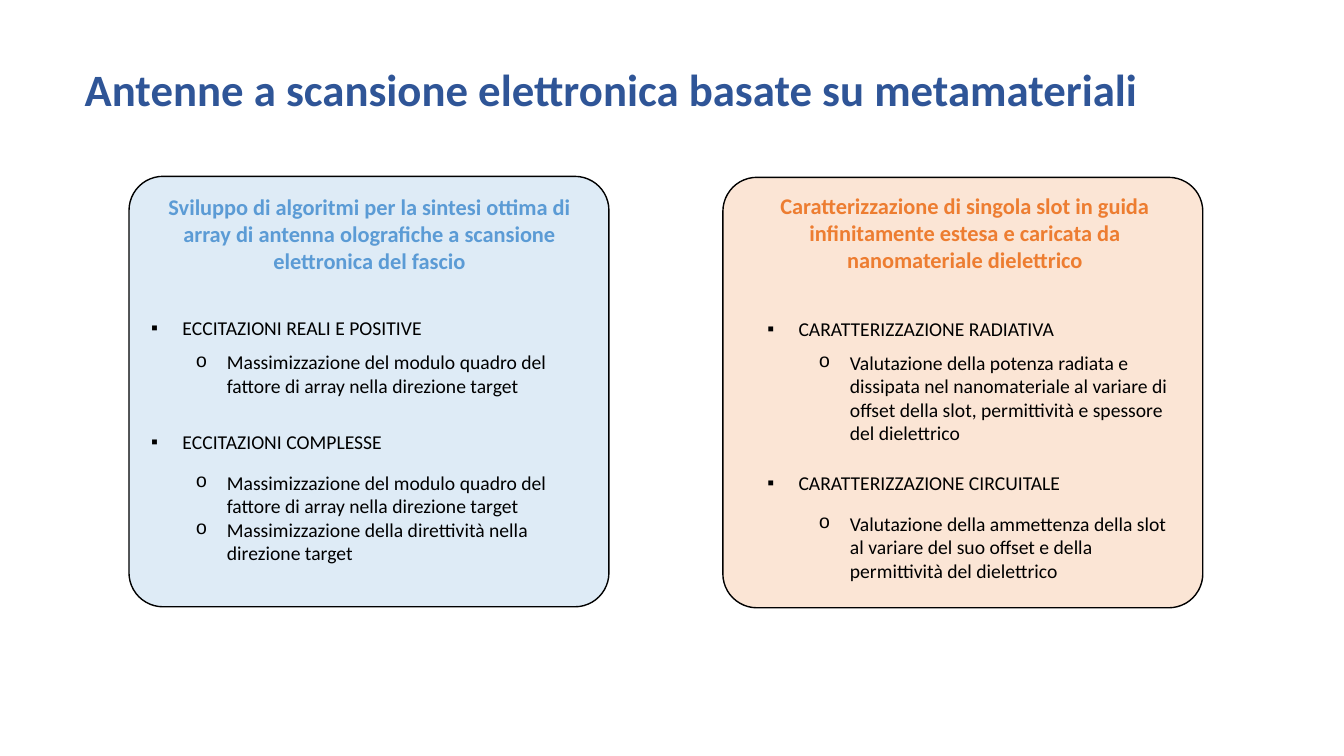
from lxml import etree
from pptx import Presentation
from pptx.dml.color import RGBColor
from pptx.enum import shapes, text
from pptx.oxml.ns import qn
from pptx.util import Inches, Pt


def color(hex_code):
    return RGBColor.from_string(hex_code)


def write(frame, words, size=14, ink="000000", bold=False, align="LEFT",
          before=0, line=1.0, bullet=None, indent=0):
    """Write one paragraph: the first of an empty frame, else a new one."""
    para = frame.paragraphs[0] if not frame.text else frame.add_paragraph()
    para.alignment = getattr(text.PP_ALIGN, align)
    para.line_spacing = line
    para.space_before = Pt(before)
    para.space_after = Pt(0)
    if bullet:
        symbol, face = bullet
        props = para._p.get_or_add_pPr()
        props.set("marL", str(Inches(indent)))
        props.set("indent", str(-Inches(0.31)))
        etree.SubElement(props, qn("a:buFont"), typeface=face)
        etree.SubElement(props, qn("a:buChar"), char=symbol)
    span = para.add_run()
    span.text = words
    span.font.name = "Calibri"
    span.font.size = Pt(size)
    span.font.bold = bold
    span.font.color.rgb = color(ink)


deck = Presentation()
deck.slide_width, deck.slide_height = Inches(13.33), Inches(7.5)
page = deck.slides.add_slide(deck.slide_layouts.get_by_name("Comparison"))
title, *bodies = page.placeholders

SQUARE, RING = ("▪", "Arial"), ("o", "Courier New")
# Each item: bullet, space before in points, words
cards = [
    dict(
        card=(1.28, 1.75), accent="5B9BD5",
        heading_at=(1.34, 1.87, 4.65, 0.91),
        heading="Sviluppo di algoritmi per la sintesi ottima di array di antenna "
                "olografiche a scansione elettronica del fascio",
        list_at=(1.4, 3.08, 4.55, 2.59), sub_indent=0.75,
        items=[
            (SQUARE, 0, "ECCITAZIONI REALI E POSITIVE"),
            (RING, 8, "Massimizzazione del modulo quadro del fattore di array "
                      "nella direzione target"),
            (SQUARE, 23, "ECCITAZIONI COMPLESSE"),
            (RING, 12.5, "Massimizzazione del modulo quadro del fattore di array "
                         "nella direzione target"),
            (RING, 0, "Massimizzazione della direttività nella direzione target"),
        ]),
    dict(
        card=(7.17, 1.76), accent="ED7D31",
        heading_at=(7.35, 1.86, 4.44, 0.91),
        heading="Caratterizzazione di singola slot in guida infinitamente estesa "
                "e caricata da nanomateriale dielettrico",
        list_at=(7.51, 3.09, 4.18, 2.76), sub_indent=0.82,
        items=[
            (SQUARE, 0, "CARATTERIZZAZIONE RADIATIVA"),
            (RING, 7.5, "Valutazione della potenza radiata e dissipata nel "
                        "nanomateriale al variare di offset della slot, "
                        "permittività e spessore del dielettrico"),
            (SQUARE, 19, "CARATTERIZZAZIONE CIRCUITALE"),
            (RING, 12, "Valutazione della ammettenza della slot al variare del suo "
                       "offset e della permittività del dielettrico"),
        ]),
]

places = [(title, (0.74, 0.61, 11.5, 0.59))]
for index, topic in enumerate(cards):
    heading, points = bodies[2 * index:2 * index + 2]
    places += [(heading, topic["heading_at"]), (points, topic["list_at"])]

    left, top = topic["card"]
    card = page.shapes.add_shape(shapes.MSO_SHAPE.ROUNDED_RECTANGLE, Inches(left),
                                 Inches(top), Inches(4.76), Inches(4.27))
    card.adjustments[0] = 0.079
    card.shadow.inherit = False
    card.fill.solid()
    card.fill.fore_color.rgb = color(topic["accent"])
    tint = card.fill._xPr.find(".//" + qn("a:srgbClr"))
    etree.SubElement(tint, qn("a:alpha"), val="20000")
    card.line.color.rgb = color("000000")
    card.line.width = Pt(1)
    title._element.addprevious(card._element)  # cards lie behind the text

    write(heading.text_frame, topic["heading"], size=16, ink=topic["accent"],
          bold=True, align="CENTER")
    for bullet, before, words in topic["items"]:
        write(points.text_frame, words, before=before, bullet=bullet,
              indent=0.31 if bullet == SQUARE else topic["sub_indent"])

write(title.text_frame, "Antenne a scansione elettronica basate su metamateriali",
      size=32, ink="2F5597", bold=True, line=0.9)

for box, place in places:
    box.left, box.top, box.width, box.height = map(Inches, place)
    box.text_frame.word_wrap = True
    box.text_frame.auto_size = text.MSO_AUTO_SIZE.NONE
    box.text_frame.vertical_anchor = text.MSO_ANCHOR.TOP
title.text_frame.vertical_anchor = text.MSO_ANCHOR.BOTTOM

deck.save("out.pptx")
